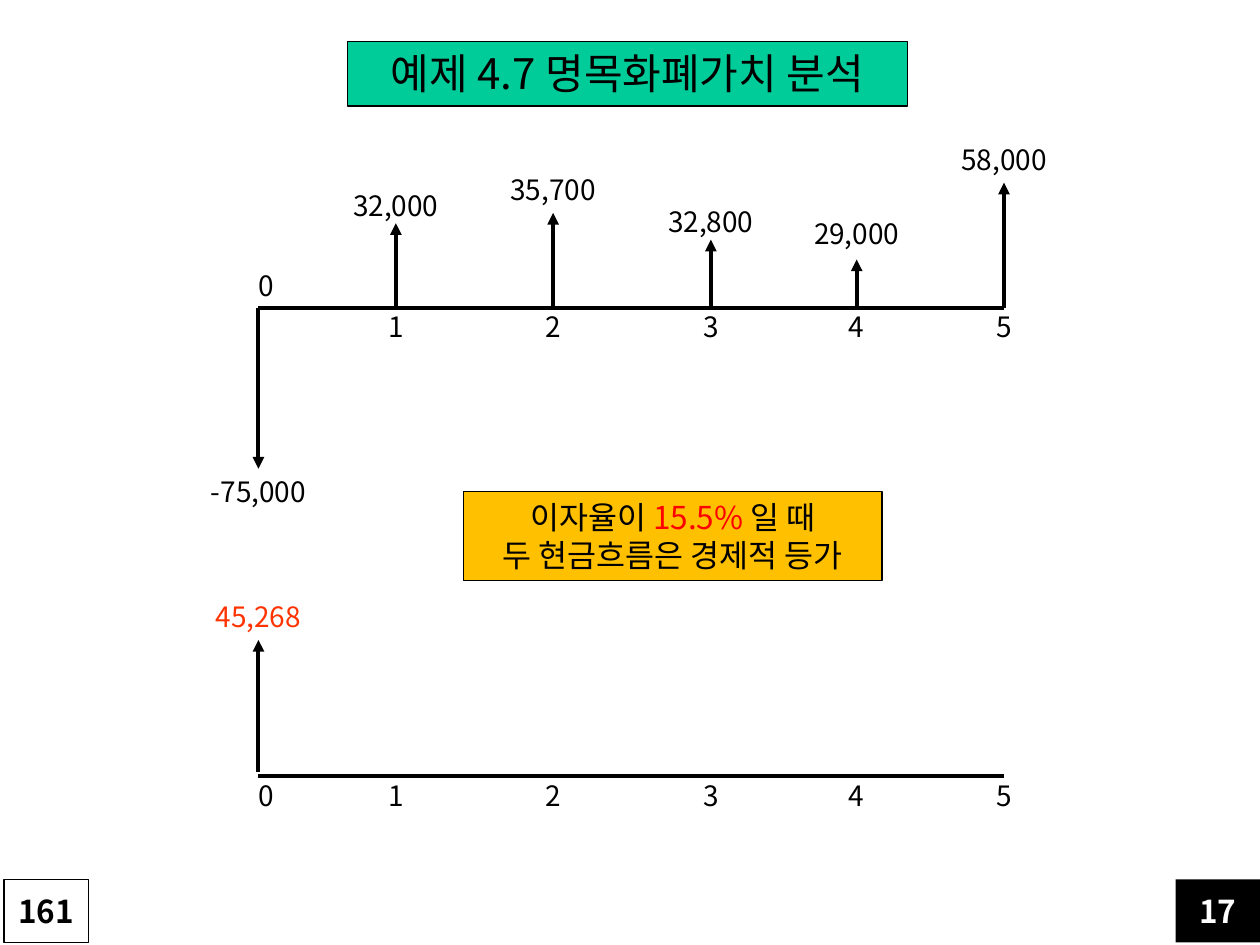
from lxml.etree import SubElement as Sub
from pptx import Presentation
from pptx.dml.color import RGBColor
from pptx.enum.shapes import MSO_CONNECTOR as Link, MSO_SHAPE as Form
from pptx.enum.text import MSO_ANCHOR as Anchor, PP_ALIGN as Align
from pptx.oxml.ns import qn
from pptx.util import Cm, Pt

BLACK = RGBColor(0x00, 0x00, 0x00)
WHITE = RGBColor(0xFF, 0xFF, 0xFF)
GREEN = RGBColor(0x00, 0xCC, 0x99)
GOLD = RGBColor(0xFF, 0xC0, 0x00)
RED = RGBColor(0xFF, 0x00, 0x00)
CORAL = RGBColor(0xFF, 0x33, 0x00)
FONT = "Noto Sans CJK KR"

# Lengths in cm
YEARS = [5.21, 7.98, 11.15, 14.33, 17.27, 20.24]
ZERO = 5.37  # centre of the label for year 0
TOP, LOW = 6.2, 15.65  # heights of the two time axes
HIGH = 0.94  # height of a label
FLOWS = [  # amount, arrow tip, label top
    ("32,000", 4.5, 3.68),
    ("35,700", 4.29, 3.35),
    ("32,800", 4.83, 3.99),
    ("29,000", 5.23, 4.24),
    ("58,000", 3.68, 2.74),
]


def write(shape, *lines, size=16, color=BLACK, bold=False, wrap=False,
          anchor=Anchor.TOP):
    """Fill a shape with centred lines; a line is a list of (text, colour)."""
    frame = shape.text_frame
    frame.word_wrap = wrap
    frame.vertical_anchor = anchor
    for i, line in enumerate(lines):
        para = frame.add_paragraph() if i else frame.paragraphs[0]
        para.alignment = Align.CENTER
        for text, tint in [(line, color)] if isinstance(line, str) else line:
            run = para.add_run()
            run.text = text
            font = run.font
            font.size, font.bold, font.name = Pt(size), bold, FONT
            font.color.rgb = tint
            Sub(font._element, qn("a:ea"), typeface=FONT)


def label(slide, text, mid, top, wide=2.31, **style):
    """Put a text box with its centre at mid."""
    box = slide.shapes.add_textbox(Cm(mid - wide / 2), Cm(top), Cm(wide), Cm(HIGH))
    write(box, text, **style)


def panel(slide, left, top, wide, high, fill, *lines, edge=BLACK, **style):
    box = slide.shapes.add_shape(Form.RECTANGLE, Cm(left), Cm(top), Cm(wide), Cm(high))
    box.shadow.inherit = False
    box.fill.solid()
    box.fill.fore_color.rgb = fill
    if edge is None:
        box.line.fill.background()
    else:
        box.line.color.rgb = edge
        box.line.width = Pt(0.75)
    write(box, *lines, **style)


def stroke(slide, x1, y1, x2, y2, head=False):
    line = slide.shapes.add_connector(Link.STRAIGHT, Cm(x1), Cm(y1), Cm(x2), Cm(y2))
    line.line.color.rgb = BLACK
    line.line.width = Pt(2.25)
    if head:
        Sub(line.line._get_or_add_ln(), qn("a:tailEnd"), type="triangle")
    Sub(line._element.spPr, qn("a:effectLst"))


def axis(slide, y, top, first):
    """Draw a time axis; first is the top of the label for year 0."""
    stroke(slide, YEARS[0], y, YEARS[-1], y)
    label(slide, "0", ZERO, first, wide=0.84)
    for year, x in enumerate(YEARS[1:], 1):
        label(slide, str(year), x, top, wide=0.84)


def main():
    deck = Presentation()
    deck.slide_width, deck.slide_height = Cm(25.4), Cm(19.05)
    slide = deck.slides.add_slide(deck.slide_layouts[6])

    # Title
    panel(slide, 7.01, 0.84, 11.28, 1.3, GREEN, "예제 4.7 명목화폐가치 분석", size=24)

    # Cash flows by year
    axis(slide, TOP, 6.12, 5.28)
    stroke(slide, YEARS[0], TOP, YEARS[0], 9.45, head=True)
    label(slide, "-75,000", YEARS[0], 9.45, wide=3.15)
    for x, (text, tip, top) in zip(YEARS[1:], FLOWS):
        stroke(slide, x, TOP, x, tip, head=True)
        label(slide, text, x, top)

    # Equivalent single amount
    axis(slide, LOW, 15.57, 15.57)
    stroke(slide, YEARS[0], 15.57, YEARS[0], 12.9, head=True)
    label(slide, "45,268", YEARS[0], 11.96, color=CORAL)

    # Remark on the rate
    rate = [("이자율이 ", BLACK), ("15.5% ", RED), ("일 때", BLACK)]
    panel(slide, 9.35, 9.91, 8.43, 1.8, GOLD, rate, "두 현금흐름은 경제적 등가", size=18)

    # Page numbers
    page = dict(size=18, bold=True, wrap=True, anchor=Anchor.MIDDLE)
    panel(slide, 23.7, 17.73, 1.7, 1.27, BLACK, "17", edge=None, color=WHITE, **page)
    panel(slide, 0.08, 17.73, 1.7, 1.27, WHITE, "161", **page)

    deck.save("out.pptx")


if __name__ == "__main__":
    main()
